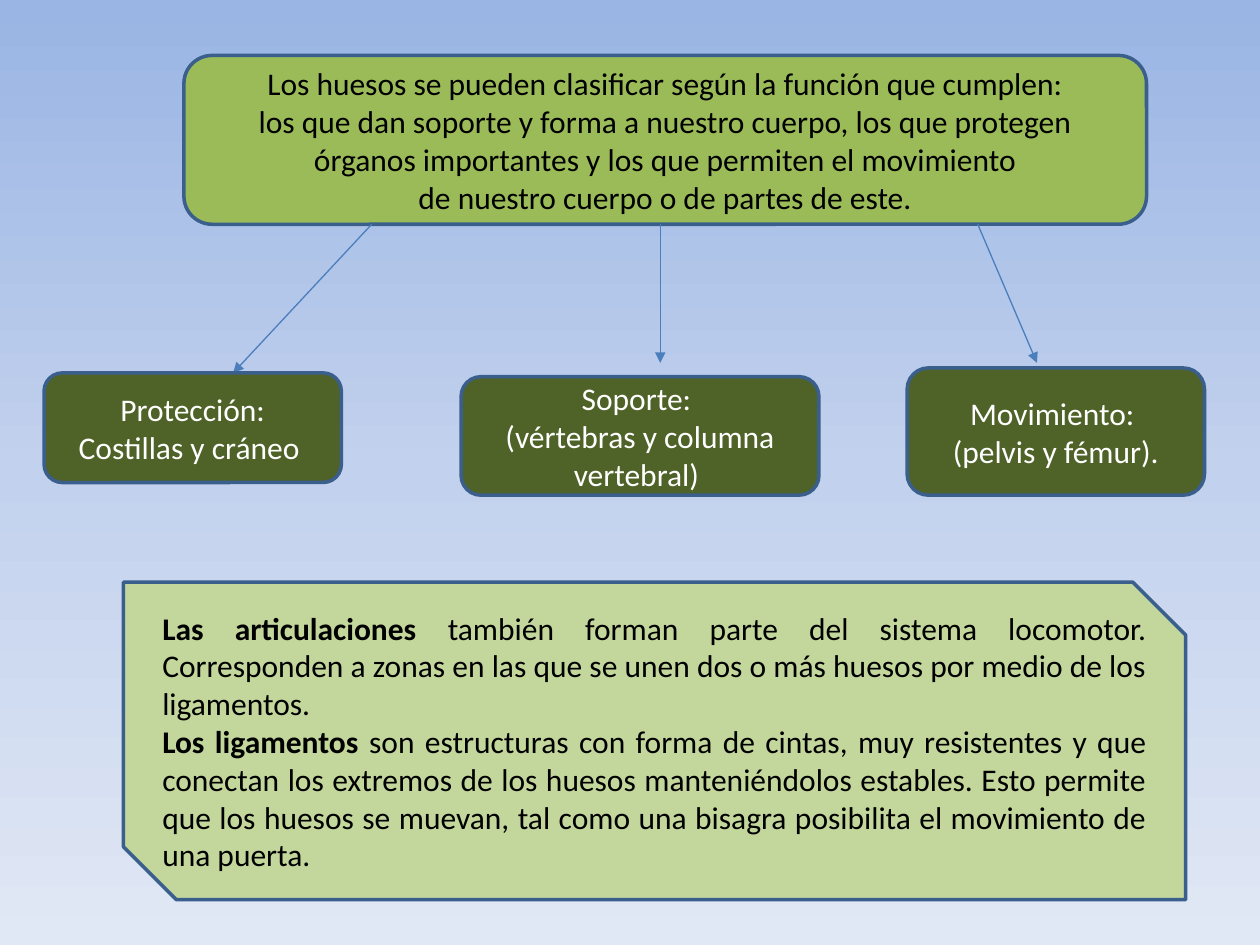
from copy import deepcopy
from dataclasses import dataclass

from lxml import etree
from pptx import Presentation
from pptx.dml.color import RGBColor
from pptx.enum.shapes import MSO_CONNECTOR, MSO_SHAPE
from pptx.enum.text import MSO_ANCHOR, PP_ALIGN
from pptx.oxml.ns import qn
from pptx.util import Inches, Pt

ROUNDED = MSO_SHAPE.ROUNDED_RECTANGLE
SNIPPED = MSO_SHAPE.SNIP_2_DIAG_RECTANGLE
STRAIGHT = MSO_CONNECTOR.STRAIGHT
MIDDLE = MSO_ANCHOR.MIDDLE
CENTER, JUSTIFY = PP_ALIGN.CENTER, PP_ALIGN.JUSTIFY
BLANK_LAYOUT = 6


@dataclass(frozen=True)
class Theme:
    font: str = "Calibri"
    text_size: int = 18
    outline_width: float = 2
    arrow_width: float = 0.75
    dark_text: str = "000000"
    light_text: str = "FFFFFF"
    heading_fill: str = "9BBB59"
    function_fill: str = "4F6228"
    joints_fill: str = "C3D69B"
    outline: str = "3A5F8C"
    arrow: str = "4B7EBC"
    background: tuple = ((0, "9AB5E4"), (0.5, "C2D1ED"), (1, "E1E8F5"))


THEME = Theme()

CLASSIFICATION = (
    "Los huesos se pueden clasificar según la función que cumplen:",
    "los que dan soporte y forma a nuestro cuerpo, los que protegen",
    "órganos importantes y los que permiten el movimiento",
    "de nuestro cuerpo o de partes de este.",
)
# Box, lines of text, arrow start and arrow end of each bone function
FUNCTIONS = (
    ((0.35, 2.96, 2.36, 0.87), ("Protección:", "Costillas y cráneo "),
     (2.95, 1.78), (1.85, 2.96)),
    ((3.66, 2.99, 2.84, 0.94), ("Soporte: ", "(vértebras y columna vertebral) "),
     (5.24, 1.78), (5.24, 2.88)),
    ((7.2, 2.92, 2.36, 1.01), ("Movimiento: ", "(pelvis y fémur)."),
     (7.76, 1.78), (8.23, 2.88)),
)
# Bold term and its explanation
DEFINITIONS = (
    ("Las articulaciones ",
     "también forman parte del sistema locomotor. Corresponden a zonas en las "
     "que se unen dos o más huesos por medio de los ligamentos."),
    ("Los ligamentos ",
     "son estructuras con forma de cintas, muy resistentes y que conectan los "
     "extremos de los huesos manteniéndolos estables. Esto permite que los "
     "huesos se muevan, tal como una bisagra posibilita el movimiento de una "
     "puerta."),
)


def color(value):
    return RGBColor.from_string(value)


def paint_background(slide):
    fill = slide.background.fill
    fill.gradient()
    fill.gradient_angle = 270
    stop_list = slide.element.find(".//" + qn("a:gsLst"))
    stop_list.append(deepcopy(stop_list[-1]))
    for stop, (position, value) in zip(fill.gradient_stops, THEME.background):
        stop.position = position
        stop.color.rgb = color(value)


def add_panel(slide, box, preset, fill, paragraphs, text_color, alignment):
    """Add an outlined shape; each paragraph is a sequence of (text, bold) runs."""
    shape = slide.shapes.add_shape(preset, *map(Inches, box))
    shape.shadow.inherit = False
    shape.fill.solid()
    shape.fill.fore_color.rgb = color(fill)
    shape.line.color.rgb = color(THEME.outline)
    shape.line.width = Pt(THEME.outline_width)
    frame = shape.text_frame
    frame.word_wrap = True
    frame.vertical_anchor = MIDDLE
    for index, runs in enumerate(paragraphs):
        paragraph = frame.add_paragraph() if index else frame.paragraphs[0]
        paragraph.alignment = alignment
        for text, bold in runs:
            run = paragraph.add_run()
            run.text = text
            run.font.name = THEME.font
            run.font.size = Pt(THEME.text_size)
            run.font.bold = bold
            run.font.color.rgb = color(text_color)


def add_arrow(slide, start, end):
    arrow = slide.shapes.add_connector(STRAIGHT, *map(Inches, start + end))
    arrow.line.color.rgb = color(THEME.arrow)
    arrow.line.width = Pt(THEME.arrow_width)
    properties = arrow.element.spPr
    line = properties.find(qn("a:ln"))
    etree.SubElement(line, qn("a:tailEnd"), type="triangle")
    etree.SubElement(properties, qn("a:effectLst"))


def plain(lines):
    return [[(line, False)] for line in lines]


def add_classification(slide, box):
    add_panel(slide, box, ROUNDED, THEME.heading_fill, plain(CLASSIFICATION),
              THEME.dark_text, CENTER)


def add_function(slide, box, lines, start, end):
    """Add one bone function and the arrow that leads to it."""
    add_arrow(slide, start, end)
    add_panel(slide, box, ROUNDED, THEME.function_fill, plain(lines),
              THEME.light_text, CENTER)


def add_definitions(slide, box):
    paragraphs = [[(term, True), (meaning, False)] for term, meaning in DEFINITIONS]
    add_panel(slide, box, SNIPPED, THEME.joints_fill, paragraphs,
              THEME.dark_text, JUSTIFY)


def main():
    presentation = Presentation()
    presentation.slide_width = Inches(10)
    presentation.slide_height = Inches(7.5)
    slide = presentation.slides.add_slide(presentation.slide_layouts[BLANK_LAYOUT])
    paint_background(slide)
    add_classification(slide, (1.46, 0.44, 7.64, 1.34))
    for function in FUNCTIONS:
        add_function(slide, *function)
    add_definitions(slide, (0.98, 4.62, 8.43, 2.52))
    presentation.save("out.pptx")


if __name__ == "__main__":
    main()
